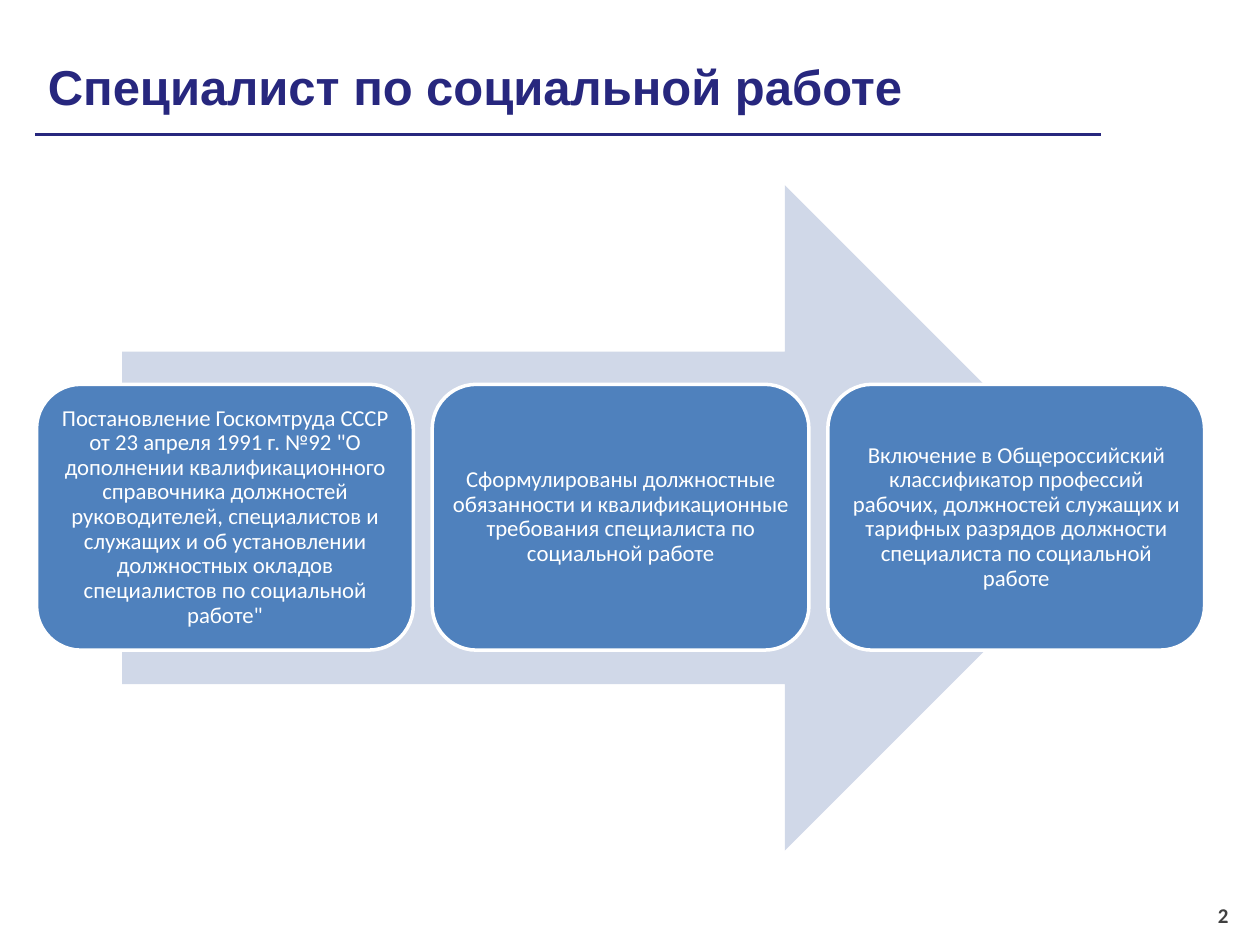
from pptx import Presentation
from pptx.dml.color import RGBColor
from pptx.enum.shapes import MSO_CONNECTOR, MSO_SHAPE
from pptx.enum.text import MSO_ANCHOR, MSO_AUTO_SIZE, PP_ALIGN
from pptx.oxml.ns import qn
from pptx.util import Pt

PX = 9144
TITLE_ONLY = 5
LEFT, CENTER, RIGHT = PP_ALIGN.LEFT, PP_ALIGN.CENTER, PP_ALIGN.RIGHT
MIDDLE = MSO_ANCHOR.MIDDLE
COLORS = {
    "navy": "27277E",
    "pale": "D0D8E8",
    "blue": "4F81BD",
    "white": "FFFFFF",
    "gray": "404040",
}
STEPS = [
    'Постановление Госкомтруда СССР от 23 апреля 1991 г. №92 "О дополнении '
    "квалификационного справочника должностей руководителей, специалистов и "
    "служащих и об установлении должностных окладов специалистов по "
    'социальной работе"',
    "Сформулированы должностные обязанности и квалификационные требования "
    "специалиста по социальной работе",
    "Включение в Общероссийский классификатор профессий рабочих, должностей "
    "служащих и тарифных разрядов должности специалиста по социальной работе",
]


def color(name):
    """Return the named colour of the palette."""
    return RGBColor.from_string(COLORS[name])


def emu(*lengths):
    """Turn px lengths into EMU."""
    return [length * PX for length in lengths]


def write(shape, text, align, font_name, size, color_name, bold=False):
    """Put one formatted paragraph into a shape and return it."""
    frame = shape.text_frame
    frame.word_wrap = True
    frame.auto_size = MSO_AUTO_SIZE.NONE
    frame.vertical_anchor = MIDDLE
    frame.text = text
    para = frame.paragraphs[0]
    para.alignment = align
    font = para.runs[0].font
    font.name, font.size, font.bold = font_name, Pt(size), bold
    font.color.rgb = color(color_name)
    return para


def add_filled(page, kind, box, fill):
    """Add a flat preset shape without an outline."""
    shape = page.shapes.add_shape(kind, *emu(*box))
    shape.shadow.inherit = False
    shape.fill.solid()
    shape.fill.fore_color.rgb = color(fill)
    shape.line.fill.background()
    return shape


def add_heading(page, box, text):
    """Place the title in the box and rule a line along its lower edge."""
    left, top, width, height = box
    title = page.shapes.title
    title.left, title.top, title.width, title.height = emu(*box)
    write(title, text, LEFT, "Arial", 28, "navy", True)
    bottom = top + height
    rule = page.shapes.add_connector(
        MSO_CONNECTOR.STRAIGHT, *emu(left, bottom, left + width, bottom))
    rule.line.color.rgb = color("navy")
    rule.line.width = Pt(1.5)
    properties = rule._element.spPr
    properties.append(properties.makeelement(qn("a:effectLst"), {}))


def add_step(page, box, text):
    """Add one rounded step card with its text."""
    card = add_filled(page, MSO_SHAPE.ROUNDED_RECTANGLE, box, "blue")
    card.line.color.rgb = color("white")
    card.line.width = Pt(2)
    frame = card.text_frame
    frame.margin_left = frame.margin_right = 5 * PX
    frame.margin_top = frame.margin_bottom = 5 * PX
    write(card, text, CENTER, "Calibri", 13, "white").line_spacing = 0.9


def add_process(page, box, steps):
    """Draw an arrow through the box and a row of step cards across its middle."""
    left, top, width, height = box
    arrow_width, card_height, gap = 790, 211, 15
    arrow_left = left + (width - arrow_width) // 2
    add_filled(page, MSO_SHAPE.RIGHT_ARROW,
               (arrow_left, top, arrow_width, height), "pale")
    card_width = (width - gap * (len(steps) - 1)) // len(steps)
    card_top = top + (height - card_height) // 2
    for index, text in enumerate(steps):
        card_left = left + index * (card_width + gap)
        add_step(page, (card_left, card_top, card_width, card_height), text)


def add_page_number(page, box, text):
    """Add the page number at the right of the box."""
    number = page.shapes.add_textbox(*emu(*box))
    write(number, text, RIGHT, "Calibri", 12, "gray", True)


def main():
    """Build the slide and save it."""
    deck = Presentation()
    deck.slide_width, deck.slide_height = emu(1000, 750)
    page = deck.slides.add_slide(deck.slide_layouts[TITLE_ONLY])
    add_heading(page, (28, 30, 846, 77), "Специалист по социальной работе")
    add_process(page, (29, 147, 927, 528), STEPS)
    add_page_number(page, (752, 706, 233, 40), "2")
    deck.save("out.pptx")


if __name__ == "__main__":
    main()
